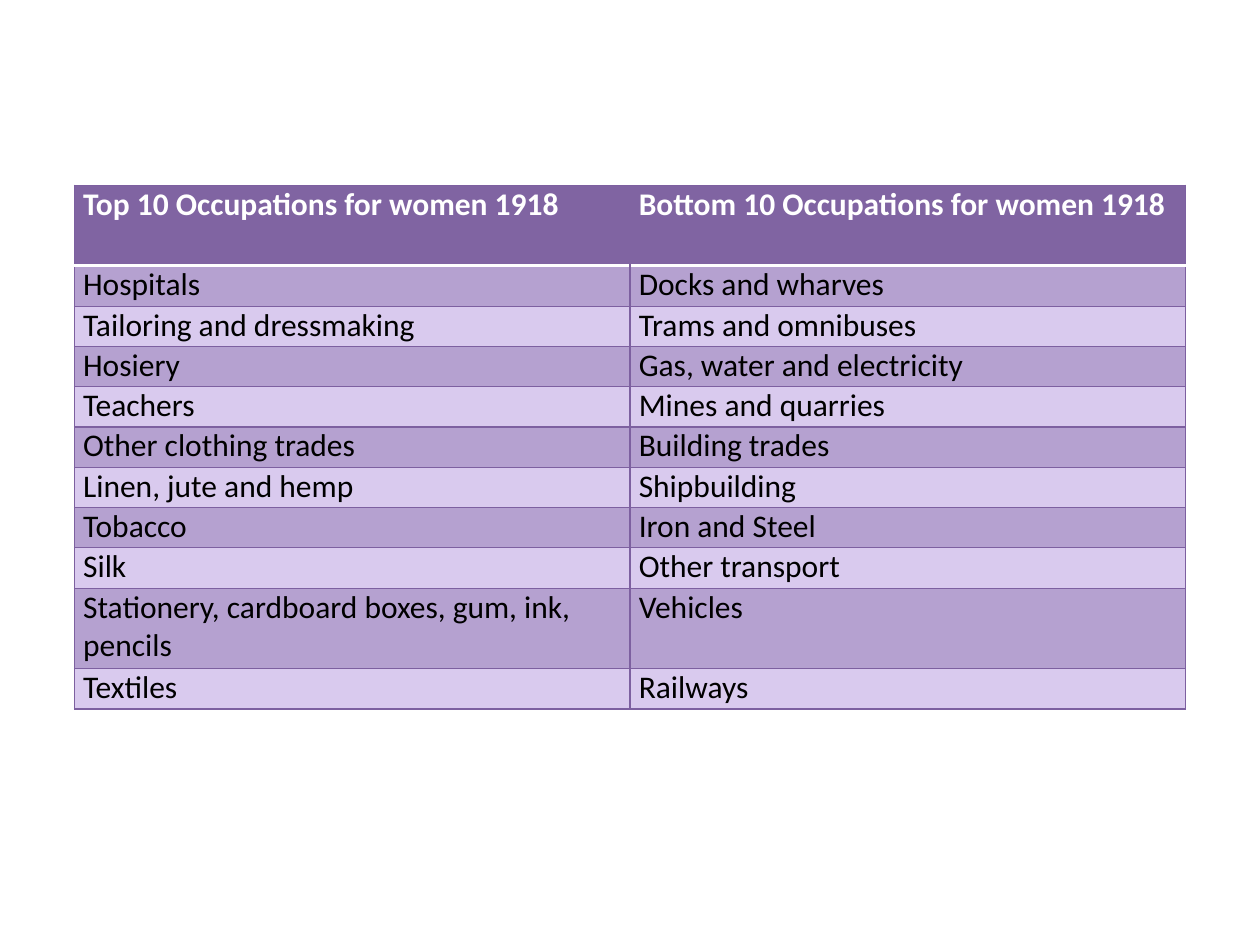
import pptx
import pptx.dml.color
import pptx.oxml
import pptx.oxml.ns
import pptx.util
from pptx.util import Inches

THEME = {
    "font": "Calibri", "size": 18,
    "header": "8064A2", "dark": "B5A1D0", "light": "D9CAEE",
    "border": "7D60A0", "white": "FFFFFF", "black": "000000",
}

ROWS = [
    ("Top 10 Occupations for women 1918", "Bottom 10 Occupations for women 1918"),
    ("Hospitals", "Docks and wharves"),
    ("Tailoring and dressmaking", "Trams and omnibuses"),
    ("Hosiery", "Gas, water and electricity"),
    ("Teachers", "Mines and quarries"),
    ("Other clothing trades", "Building trades"),
    ("Linen, jute and hemp", "Shipbuilding"),
    ("Tobacco", "Iron and Steel"),
    ("Silk", "Other transport"),
    ("Stationery, cardboard boxes, gum, ink, pencils", "Vehicles"),
    ("Textiles", "Railways"),
]
TALL_ROWS = (0, 9)


def rgb(name):
    return pptx.dml.color.RGBColor.from_string(THEME[name])


def add_border(cell, side, color, width):
    fill = f'<a:solidFill><a:srgbClr val="{THEME[color]}"/></a:solidFill>' if color else "<a:noFill/>"
    cell._tc.get_or_add_tcPr().append(pptx.oxml.parse_xml(
        f'<a:ln{side} {pptx.oxml.ns.nsdecls("a")} w="{pptx.util.Pt(width)}">{fill}</a:ln{side}>'))


prs = pptx.Presentation()
prs.slide_width, prs.slide_height = Inches(10), Inches(7.5)
s = prs.slides.add_slide(prs.slide_layouts[6])

# Table grid
heights = [0.64 if i in TALL_ROWS else 0.32 for i in range(len(ROWS))]
table = s.shapes.add_table(len(ROWS), 2, Inches(0.59), Inches(1.47),
                           Inches(8.82), Inches(sum(heights))).table
for col in table.columns:
    col.width = Inches(4.41)
for row, height in zip(table.rows, heights):
    row.height = Inches(height)

# Cells: header row, then alternating bands
for i, texts in enumerate(ROWS):
    header = i == 0
    band = "header" if header else "dark" if i % 2 else "light"
    for j, text in enumerate(texts):
        cell = table.cell(i, j)
        margins = {"margin_left": 0.07, "margin_right": 0.07, "margin_top": 0, "margin_bottom": 0}
        for name, value in margins.items():
            setattr(cell, name, Inches(value))

        # Borders come before the fill in the cell properties
        borders = {side: ("border", 0.75) for side in "LRTB"}
        if header:
            borders["B"] = ("white", 2)
            borders["L" if j else "R"] = (None, 0)
        elif i == 1:
            borders["T"] = ("white", 2)
        for side, (color, width) in borders.items():
            add_border(cell, side, color, width)
        cell.fill.solid()
        cell.fill.fore_color.rgb = rgb(band)

        r = cell.text_frame.paragraphs[0].add_run()
        r.text = text
        font = {"name": THEME["font"], "size": pptx.util.Pt(THEME["size"]), "bold": header}
        for name, value in font.items():
            setattr(r.font, name, value)
        r.font.color.rgb = rgb("white" if header else "black")

prs.save("out.pptx")
